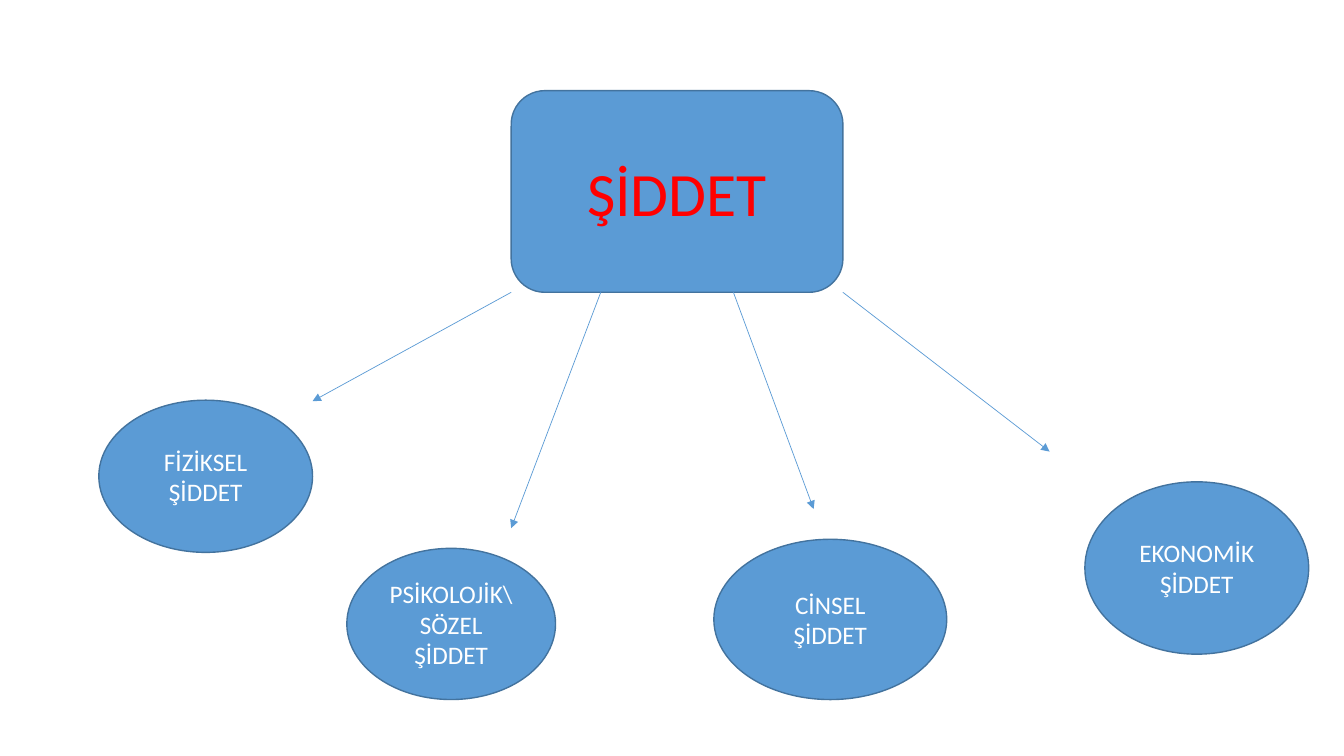
from lxml.etree import SubElement
from pptx import Presentation
from pptx.dml.color import RGBColor
from pptx.enum.shapes import MSO_CONNECTOR, MSO_SHAPE
from pptx.enum.text import MSO_ANCHOR, PP_ALIGN
from pptx.oxml.ns import qn
from pptx.util import Inches, Pt

BLUE = RGBColor(0x5B, 0x9B, 0xD5)
DARK_BLUE = RGBColor(0x43, 0x73, 0x9E)
RED = RGBColor(0xFF, 0x00, 0x00)
WHITE = RGBColor(0xFF, 0xFF, 0xFF)
FONT = "Calibri"

# Boxes are left, top, width, height in inches
TOPIC_BOX = (5.07, 0.9, 3.29, 2)

# Label, ellipse box, arrow start as (x, y) share of the topic box, arrow tip
VIOLENCE_TYPES = [
    ("FİZİKSEL ŞİDDET", (0.98, 3.97, 2.12, 1.51), (0, 1), (3.1, 3.98)),
    ("PSİKOLOJİK\\ SÖZEL ŞİDDET", (3.44, 5.44, 2.07, 1.5), (0.27, 1), (5.07, 5.24)),
    ("CİNSEL ŞİDDET", (7.08, 5.35, 2.31, 1.59), (0.67, 1), (8.07, 5.05)),
    ("EKONOMİK ŞİDDET", (10.76, 4.78, 2.22, 1.71), (1, 1), (10.41, 4.48)),
]


def add_node(slide, preset, box, label, size, color):
    """Draw a filled shape with a centred label in the given box."""
    node = slide.shapes.add_shape(preset, *map(Inches, box))
    node.shadow.inherit = False
    node.fill.solid()
    node.fill.fore_color.rgb = BLUE
    node.line.color.rgb = DARK_BLUE
    node.line.width = Pt(1)

    frame = node.text_frame
    frame.word_wrap = True
    frame.vertical_anchor = MSO_ANCHOR.MIDDLE
    paragraph = frame.paragraphs[0]
    paragraph.text = label
    paragraph.alignment = PP_ALIGN.CENTER
    paragraph.font.name = FONT
    paragraph.font.size = Pt(size)
    paragraph.font.color.rgb = color


def add_arrow(slide, box, start_share, tip):
    """Draw an arrow from a point on the box to the tip."""
    left, top, width, height = box
    share_x, share_y = start_share
    start = (left + share_x * width, top + share_y * height)
    arrow = slide.shapes.add_connector(
        MSO_CONNECTOR.STRAIGHT, *map(Inches, start + tip))
    arrow.line.color.rgb = BLUE
    arrow.line.width = Pt(0.5)
    SubElement(arrow.line._get_or_add_ln(), qn("a:tailEnd"), type="triangle")
    SubElement(arrow._element.spPr, qn("a:effectLst"))


def add_violence_map(slide, topic_box):
    """Draw the topic, its arrows and the types of violence."""
    # Central topic
    add_node(slide, MSO_SHAPE.ROUNDED_RECTANGLE, topic_box, "ŞİDDET", 44, RED)

    # Branches
    for label, box, start_share, tip in VIOLENCE_TYPES:
        add_arrow(slide, topic_box, start_share, tip)
        add_node(slide, MSO_SHAPE.OVAL, box, label, 18, WHITE)


def main():
    deck = Presentation()
    deck.slide_width = Inches(13.33)
    deck.slide_height = Inches(7.5)
    slide = deck.slides.add_slide(deck.slide_layouts[6])
    add_violence_map(slide, TOPIC_BOX)
    deck.save("out.pptx")


if __name__ == "__main__":
    main()
